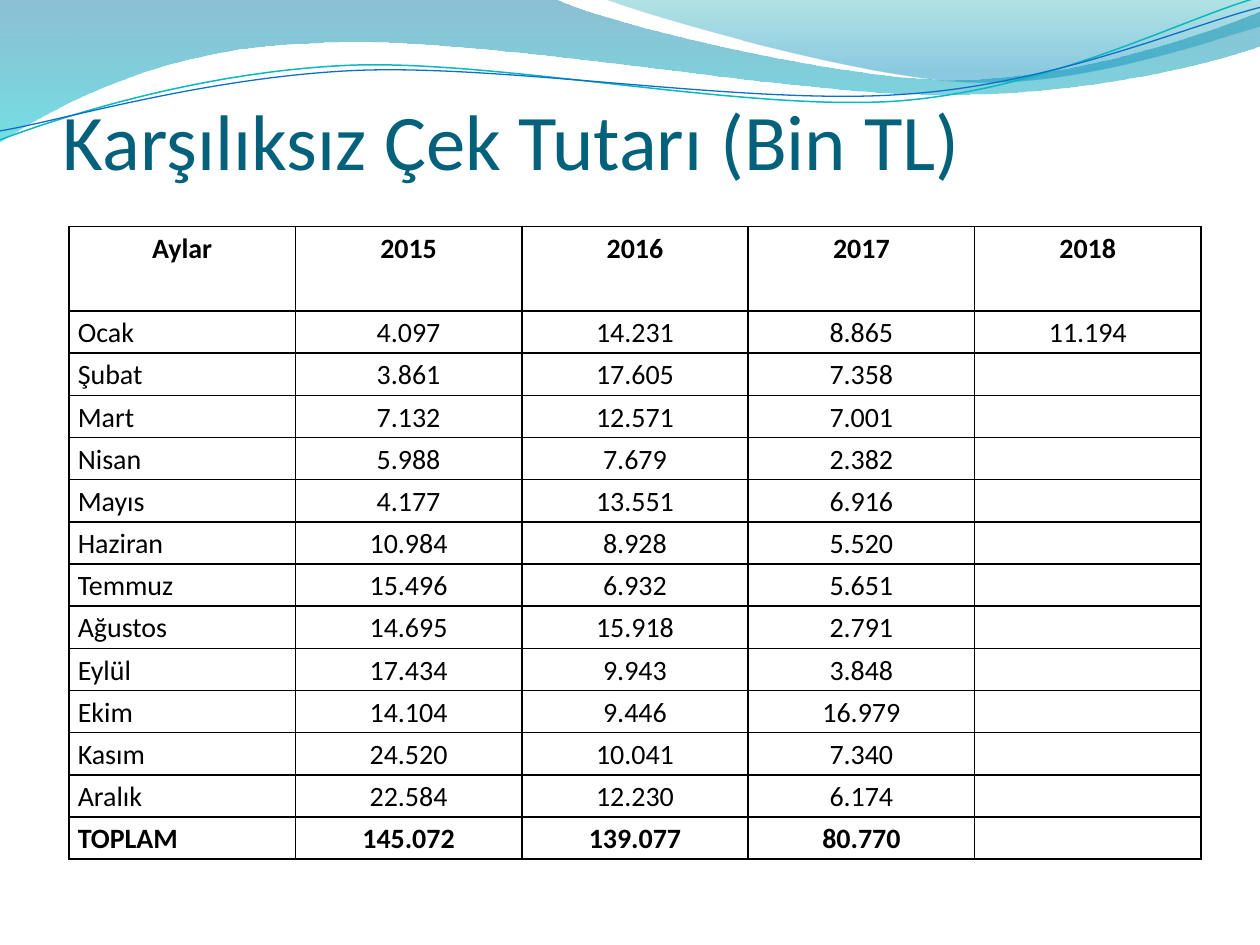
"""Build the slide with the monthly table of bounced cheque amounts."""
import pptx
import pptx.dml.color
import pptx.enum.text
import pptx.oxml
import pptx.oxml.ns
import pptx.util
from dataclasses import dataclass
from lxml import etree


@dataclass(frozen=True)
class Theme:
    font: str = "Calibri"
    title: str = "04617B"
    text: str = "000000"
    teal: str = "0AB8BF"
    blue: str = "0F6FC6"
    title_size: int = 45
    cell_size: int = 16
    spacing: float = 1.15
    border: int = 1
    wave_back: tuple = ((0, "0074A1", 45), (1, "00C6CF", 55))
    wave_front: tuple = ((0, "00A1A9", 30), (0.8, "008BBF", 45))


theme = Theme()
Cm = pptx.util.Cm
Pt = pptx.util.Pt
RGB = pptx.dml.color.RGBColor.from_string
qn = pptx.oxml.ns.qn
ALIGN = pptx.enum.text.PP_ALIGN


def add_curve(shapes, start, segments, close):
    points = [(Cm(x), Cm(y)) for seg in segments for x, y in zip(seg[::2], seg[1::2])]
    fb = shapes.build_freeform(Cm(start[0]), Cm(start[1]), scale=1.0)
    fb.add_line_segments(points, close=close)
    sp = fb.convert_to_shape()
    sp.shadow.inherit = False
    lines = iter(list(sp.element.iter(qn("a:lnTo"))))
    for seg in segments:
        first = next(lines)
        if len(seg) == 6:
            curve = etree.Element(qn("a:cubicBezTo"))
            first.addprevious(curve)
            for ln in (first, next(lines), next(lines)):
                curve.append(ln[0])
                ln.getparent().remove(ln)
    return sp


def add_run(p, text, size, color, bold=False):
    r = p.add_run()
    r.text = text
    r.font.name = theme.font
    r.font.size = Pt(size)
    r.font.bold = bold
    r.font.color.rgb = RGB(color)


prs = pptx.Presentation()
prs.slide_width, prs.slide_height = Cm(25.4), Cm(19.05)
s = prs.slides.add_slide(prs.slide_layouts[6])

waves = [
    ((0, 0), [
        (11.18, -0.03),
        (12.09, 0.43, 16.87, 1.6, 19.25, 1.6),
        (21.67, 1.6, 24.33, 0.66, 25.4, 0.23),
        (25.43, 0.91),
        (24.97, 1.12, 22.1, 1.93, 18.95, 1.91),
        (15.8, 1.91, 9.7, 0.71, 6.53, 0.86),
        (3.28, 0.91, 1.17, 2.11, -0.03, 2.87),
    ], theme.wave_back),
    ((12.17, -0.03), [
        (12.93, 0.28, 17.32, 1.57, 19.53, 1.65),
        (21.74, 1.75, 24.41, 0.81, 25.4, 0.53),
        (25.4, 0),
    ], theme.wave_front),
]
for start, segments, stops in waves:
    sp = add_curve(s.shapes, start, segments, True)
    sp.line.fill.background()
    sp.fill.gradient()
    sp.fill.gradient_angle = 270
    for stop, (position, color, _) in zip(sp.fill.gradient_stops, stops):
        stop.position = position
        stop.color.rgb = RGB(color)
    for clr, (_, _, alpha) in zip(sp.element.iter(qn("a:srgbClr")), stops):
        etree.SubElement(clr, qn("a:alpha"), val=str(alpha * 1000))

strands = [
    ((-0.05, 2.22), [
        (1.19, 1.82, 4.02, 1.04, 7.05, 1.05),
        (10.05, 1.07, 15.02, 2.37, 18.08, 2.29),
        (21.13, 2.2, 23.86, 0.91, 25.41, 0.55),
    ], theme.teal, 0.85),
    ((-0.04, 2.04), [
        (1.16, 1.9, 4.17, 1.15, 7.2, 1.16),
        (10.25, 1.18, 15.13, 2.25, 18.19, 2.16),
        (21.21, 2.11, 23.93, 1.06, 25.45, 0.75),
    ], theme.blue, 0.75),
]
group = s.shapes.add_group_shape()
for start, segments, color, width in strands:
    sp = add_curve(group.shapes, start, segments, False)
    sp.rotation = 357.3
    sp.fill.background()
    sp.line.color.rgb = RGB(color)
    sp.line.width = Pt(width)

tf = s.shapes.add_textbox(Cm(1.27), Cm(1.96), Cm(23.06), Cm(1.8)).text_frame
tf.word_wrap = True
tf.vertical_anchor = pptx.enum.text.MSO_ANCHOR.BOTTOM
tf.margin_left = tf.margin_right = tf.margin_bottom = 0
tf.margin_top = Cm(0.13)
add_run(tf.paragraphs[0], "Karşılıksız Çek Tutarı (Bin TL)", theme.title_size, theme.title)

rows = [
    ("Aylar", "2015", "2016", "2017", "2018"),
    ("Ocak", "4.097", "14.231", "8.865", "11.194"),
    ("Şubat", "3.861", "17.605", "7.358", ""),
    ("Mart", "7.132", "12.571", "7.001", ""),
    ("Nisan", "5.988", "7.679", "2.382", ""),
    ("Mayıs", "4.177", "13.551", "6.916", ""),
    ("Haziran", "10.984", "8.928", "5.520", ""),
    ("Temmuz", "15.496", "6.932", "5.651", ""),
    ("Ağustos", "14.695", "15.918", "2.791", ""),
    ("Eylül", "17.434", "9.943", "3.848", ""),
    ("Ekim", "14.104", "9.446", "16.979", ""),
    ("Kasım", "24.520", "10.041", "7.340", ""),
    ("Aralık", "22.584", "12.230", "6.174", ""),
    ("TOPLAM", "145.072", "139.077", "80.770", ""),
]
header_height, row_height, table_width = 1.7, 0.85, 22.82
table = s.shapes.add_table(
    len(rows), len(rows[0]), Cm(1.39), Cm(4.57), Cm(table_width),
    Cm(header_height + row_height * (len(rows) - 1))).table
table.first_row = table.horz_banding = False
for i, values in enumerate(rows):
    table.rows[i].height = Cm(row_height if i else header_height)
    for j, value in enumerate(values):
        cell = table.cell(i, j)
        cell.margin_left = cell.margin_right = Cm(0.18)
        cell.margin_top = cell.margin_bottom = 0
        p = cell.text_frame.paragraphs[0]
        p.line_spacing = theme.spacing
        p.alignment = ALIGN.LEFT if i and not j else ALIGN.CENTER
        if value:
            add_run(p, value, theme.cell_size, theme.text, i in (0, len(rows) - 1))
        else:
            etree.SubElement(p._p, qn("a:endParaRPr"), sz=str(theme.cell_size * 100))
        tcPr = cell._tc.get_or_add_tcPr()
        for side in ("lnL", "lnR", "lnT", "lnB"):
            ln = etree.SubElement(tcPr, qn(f"a:{side}"), w=str(Pt(theme.border)))
            fill = etree.SubElement(ln, qn("a:solidFill"))
            etree.SubElement(fill, qn("a:srgbClr"), val=theme.text)
        cell.fill.background()

prs.save("out.pptx")
